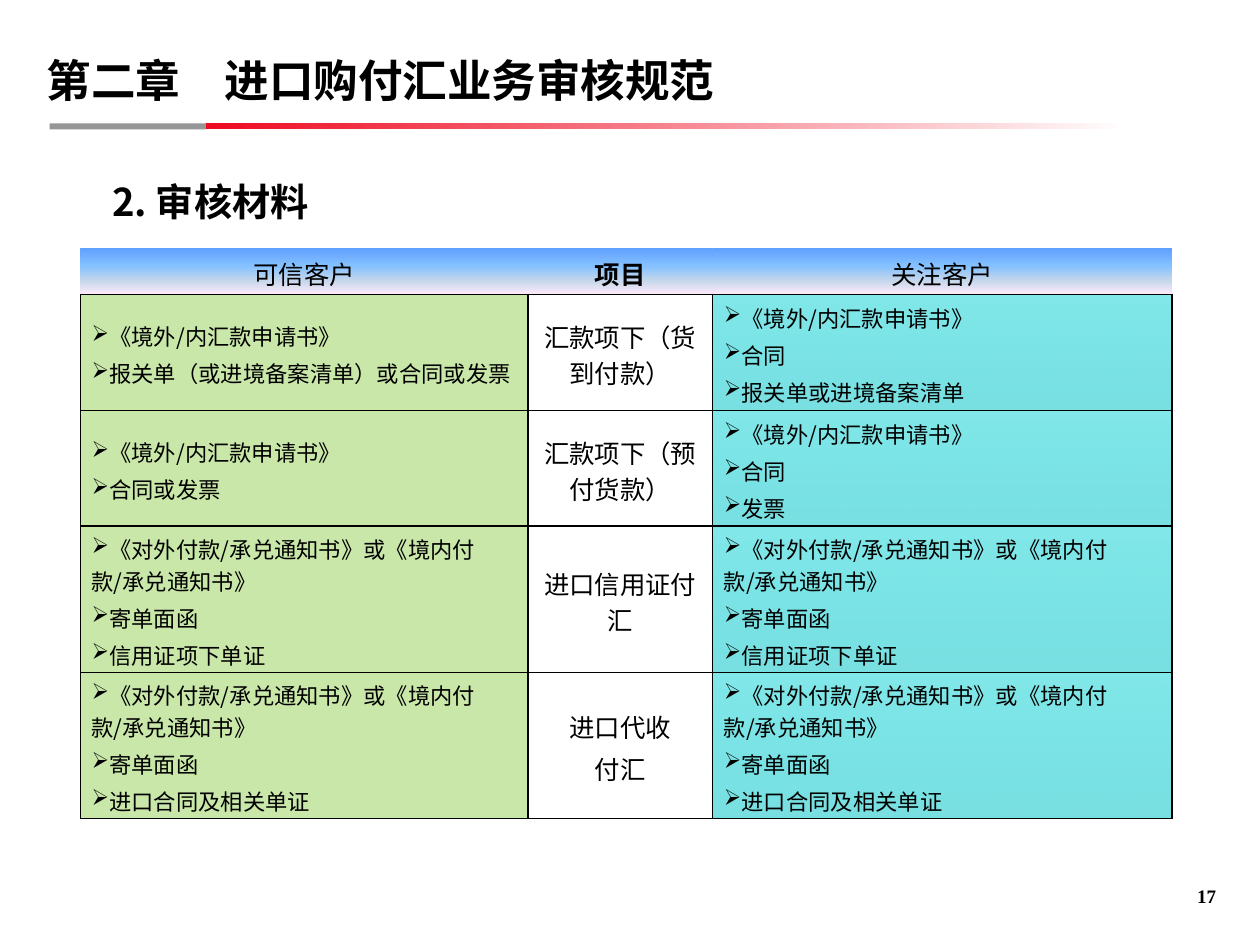
import dataclasses

import lxml.etree
import pptx
import pptx.dml.color
import pptx.enum.shapes
import pptx.enum.text
import pptx.oxml
import pptx.oxml.ns
import pptx.util

Cm = pptx.util.Cm
Pt = pptx.util.Pt
ALIGN = pptx.enum.text.PP_ALIGN
ANCHOR = pptx.enum.text.MSO_ANCHOR
NAMESPACE = pptx.oxml.ns.nsdecls("a")
qn = pptx.oxml.ns.qn


@dataclasses.dataclass(frozen=True)
class Theme:
    chinese: str = "Noto Sans CJK SC"
    latin: str = "Arial"
    serif: str = "Times New Roman"
    title_size: int = 28
    heading_size: int = 24
    label_size: int = 16
    item_size: int = 14
    number_size: int = 12
    ink: str = "000000"
    gray: str = "969696"
    red: str = "EE0A20"
    white: str = "FFFFFF"
    # Cell fills are lists of (position, colour, opacity)
    header: tuple = ((0, "5E9EFF", 100), (40, "85C2FF", 100),
                     (70, "C4D6EB", 100), (100, "FFEBFA", 100))
    trusted: tuple = ((0, "92D050", 49),)
    plain: tuple = ((0, "FFFFFF", 100),)
    watched: tuple = ((0, "06D1D4", 50), (100, "41D3D6", 71))


class SlideBuilder:
    """Draws styled elements on the current slide."""

    def __init__(self, presentation, theme):
        self.theme = theme
        self.slide = presentation.slides.add_slide(presentation.slide_layouts[5])

    def format_runs(self, paragraph, size, font, bold=False):
        for run in paragraph.runs:
            run.font.size = Pt(size)
            run.font.name = font
            run.font.bold = bold
            run.font.color.rgb = pptx.dml.color.RGBColor.from_string(self.theme.ink)
            east_asian = lxml.etree.Element(qn("a:ea"), typeface=self.theme.chinese)
            run.font._element.find(qn("a:latin")).addnext(east_asian)

    def fill_frame(self, shape, text, size, font, align, anchor, wrap=True):
        frame = shape.text_frame
        frame.text = text
        frame.word_wrap = wrap
        frame.auto_size = pptx.enum.text.MSO_AUTO_SIZE.NONE
        frame.vertical_anchor = anchor
        frame.margin_left = frame.margin_right = frame.margin_top = frame.margin_bottom = 0
        frame.paragraphs[0].alignment = align
        self.format_runs(frame.paragraphs[0], size, font, True)

    def title(self, text, left, top, width, height):
        shape = self.slide.shapes.title
        shape.left, shape.top, shape.width, shape.height = map(Cm, (left, top, width, height))
        self.fill_frame(shape, text, self.theme.title_size, self.theme.chinese,
                        ALIGN.LEFT, ANCHOR.BOTTOM)
        shape.text_frame.paragraphs[0].line_spacing = 0.85

    def text(self, text, left, top, width, height, size, font,
             align=ALIGN.LEFT, anchor=ANCHOR.TOP, wrap=True):
        shape = self.slide.shapes.add_textbox(*map(Cm, (left, top, width, height)))
        self.fill_frame(shape, text, size, font, align, anchor, wrap)

    def bar(self, left, top, width, height, colors):
        shape = self.slide.shapes.add_shape(
            pptx.enum.shapes.MSO_SHAPE.RECTANGLE, *map(Cm, (left, top, width, height)))
        shape.shadow.inherit = False
        shape.line.fill.background()
        if len(colors) == 1:
            shape.fill.solid()
            targets = [shape.fill.fore_color]
        else:
            shape.fill.gradient()
            shape.fill.gradient_angle = 0
            targets = [stop.color for stop in shape.fill.gradient_stops]
        for target, color in zip(targets, colors):
            target.rgb = pptx.dml.color.RGBColor.from_string(color)

    def paint_cell(self, cell, stops, bordered):
        properties = cell._tc.get_or_add_tcPr()
        for side in "LRTB":
            visible = bordered or side == "B"
            line = (f'<a:solidFill><a:srgbClr val="{self.theme.ink}"/></a:solidFill>'
                    if visible else "<a:noFill/>")
            properties.append(pptx.oxml.parse_xml(
                f'<a:ln{side} {NAMESPACE} w="{Pt(1)}">{line}</a:ln{side}>'))
        colors = [f'<a:srgbClr val="{color}"><a:alpha val="{opacity * 1000}"/></a:srgbClr>'
                  for _, color, opacity in stops]
        if len(stops) == 1:
            fill = f"<a:solidFill {NAMESPACE}>{colors[0]}</a:solidFill>"
        else:
            marks = "".join(f'<a:gs pos="{stop[0] * 1000}">{color}</a:gs>'
                            for stop, color in zip(stops, colors))
            fill = (f'<a:gradFill {NAMESPACE} rotWithShape="1"><a:gsLst>{marks}</a:gsLst>'
                    '<a:lin ang="5400000" scaled="1"/></a:gradFill>')
        properties.append(pptx.oxml.parse_xml(fill))

    def cell(self, cell, lines, stops, size, font, bold=False, bullets=False, bordered=True):
        cell.text_frame.text = "\n".join(lines)
        cell.vertical_anchor = ANCHOR.MIDDLE
        cell.margin_left = cell.margin_right = Cm(0.25)
        cell.margin_top, cell.margin_bottom = Cm(0.13), Cm(0.03)
        for paragraph in cell.text_frame.paragraphs:
            paragraph.alignment = ALIGN.LEFT if bullets else ALIGN.CENTER
            paragraph.space_before = Pt(size * 0.2)
            self.format_runs(paragraph, size, font, bold)
            if bullets:
                properties = paragraph._p.get_or_add_pPr()
                lxml.etree.SubElement(properties, qn("a:buChar"), char="➢")
        self.paint_cell(cell, stops, bordered)

    def table(self, headings, rows, left, top, widths, heights):
        theme = self.theme
        table = self.slide.shapes.add_table(
            len(heights), len(widths), Cm(left), Cm(top),
            Cm(sum(widths)), Cm(sum(heights))).table
        table.first_row = table.horz_banding = False
        for column, width in zip(table.columns, widths):
            column.width = Cm(width)
        for row, height in zip(table.rows, heights):
            row.height = Cm(height)
        fonts = (theme.chinese, theme.latin, theme.chinese)
        fills = (theme.trusted, theme.plain, theme.watched)
        for index, heading in enumerate(headings):
            self.cell(table.cell(0, index), [heading], theme.header, theme.label_size,
                      fonts[index], bold=index == 1, bordered=False)
        for row_index, row in enumerate(rows, 1):
            for index, lines in enumerate(row):
                is_list = index != 1
                size = theme.item_size if is_list else theme.label_size
                self.cell(table.cell(row_index, index), lines, fills[index], size,
                          fonts[index], bullets=is_list)


def main():
    presentation = pptx.Presentation()
    presentation.slide_width, presentation.slide_height = Cm(27.94), Cm(20.96)
    theme = Theme()
    builder = SlideBuilder(presentation, theme)

    builder.bar(1.1, 2.74, 3.47, 0.13, [theme.gray])
    builder.bar(4.57, 2.74, 20.52, 0.13, [theme.red, theme.white])
    builder.title("第二章　进口购付汇业务审核规范", 1.04, 0.84, 22.12, 1.52)
    builder.text("2. 审核材料", 2.49, 3.96, 22, 1.25, theme.heading_size, theme.chinese)
    builder.text("17", 25.83, 19.05, 1.14, 1.07, theme.number_size, theme.serif,
                 ALIGN.RIGHT, ANCHOR.BOTTOM, wrap=False)

    remittance = "《境外/内汇款申请书》"
    notice = "《对外付款/承兑通知书》或《境内付款/承兑通知书》"
    credit = [notice, "寄单面函", "信用证项下单证"]
    collection = [notice, "寄单面函", "进口合同及相关单证"]
    rows = [
        ([remittance, "报关单（或进境备案清单）或合同或发票"], ["汇款项下（货到付款）"],
         [remittance, "合同", "报关单或进境备案清单"]),
        ([remittance, "合同或发票"], ["汇款项下（预付货款）"],
         [remittance, "合同", "发票"]),
        (credit, ["进口信用证付汇"], credit),
        (collection, ["进口代收", "付汇"], collection),
    ]
    builder.table(["可信客户", "项目", "关注客户"], rows, 1.78, 5.49,
                  [9.93, 4.09, 10.19], [1.04, 2.57, 2.57, 3.23, 3.23])
    presentation.save("out.pptx")


if __name__ == "__main__":
    main()
